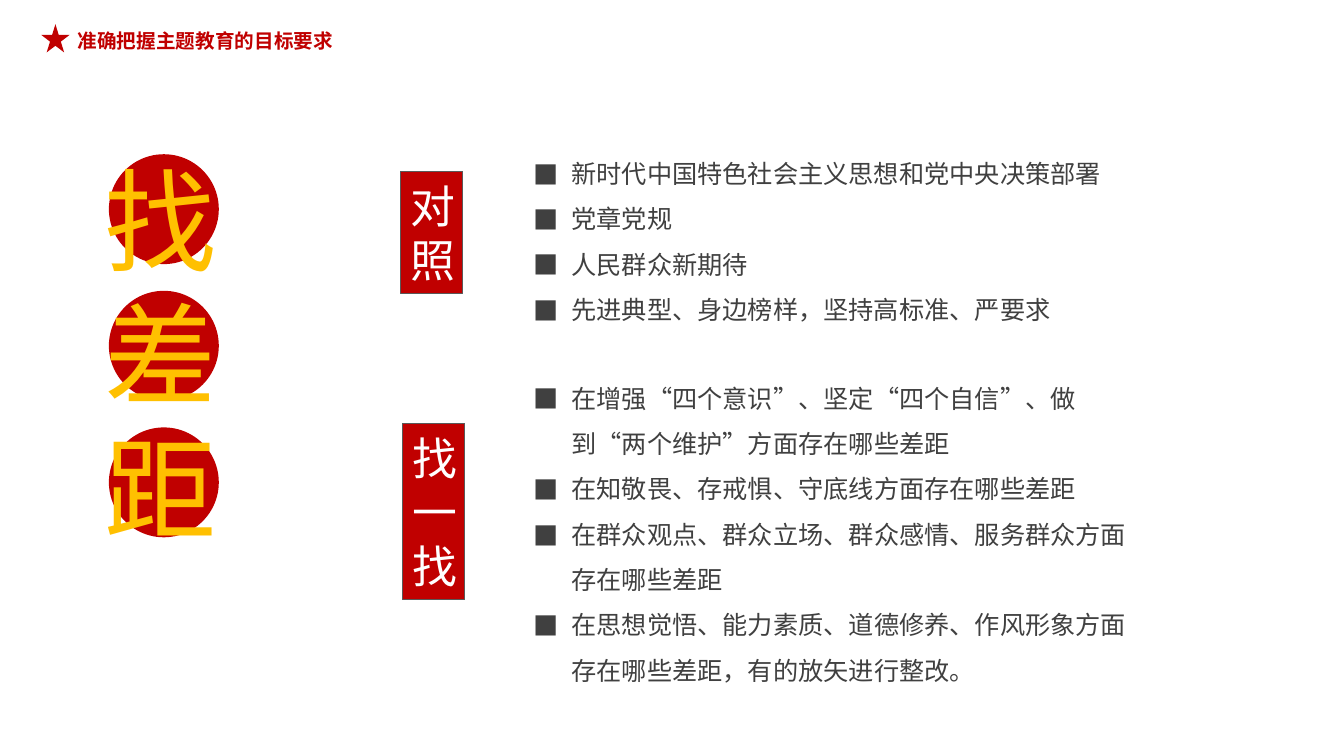
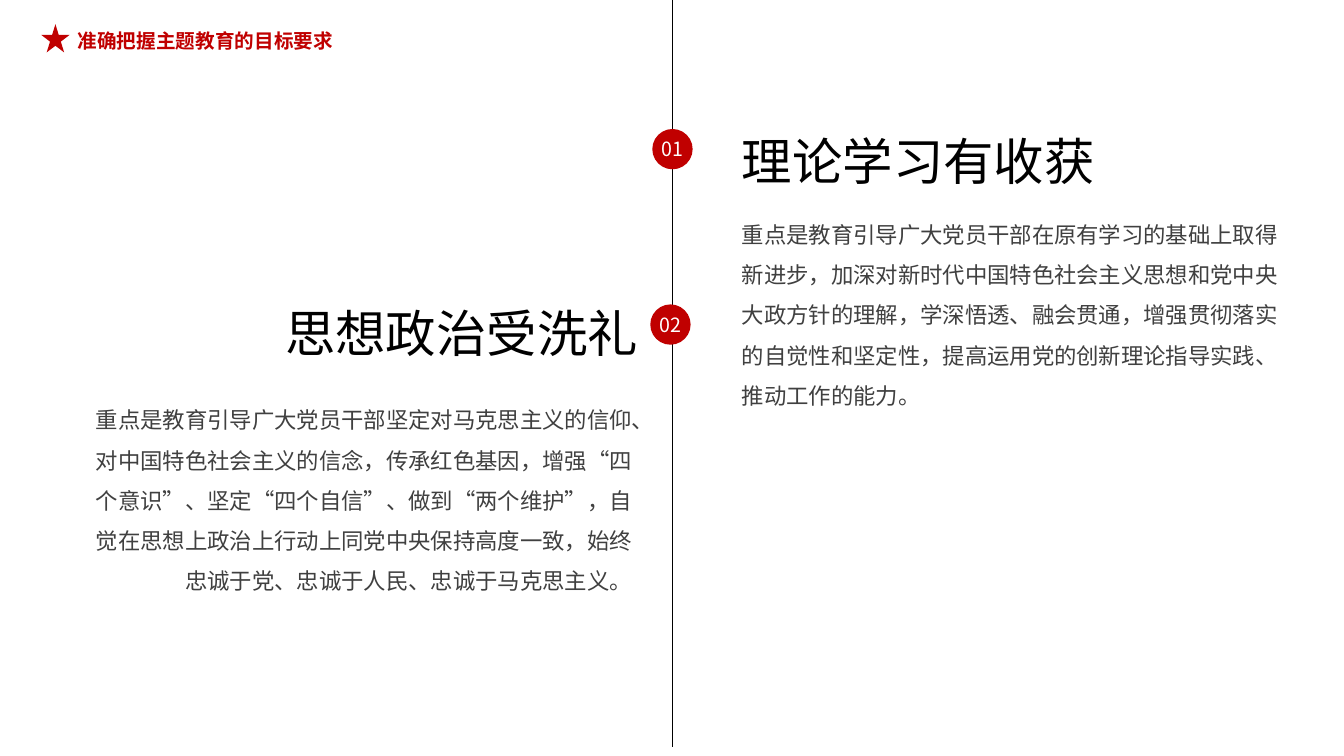
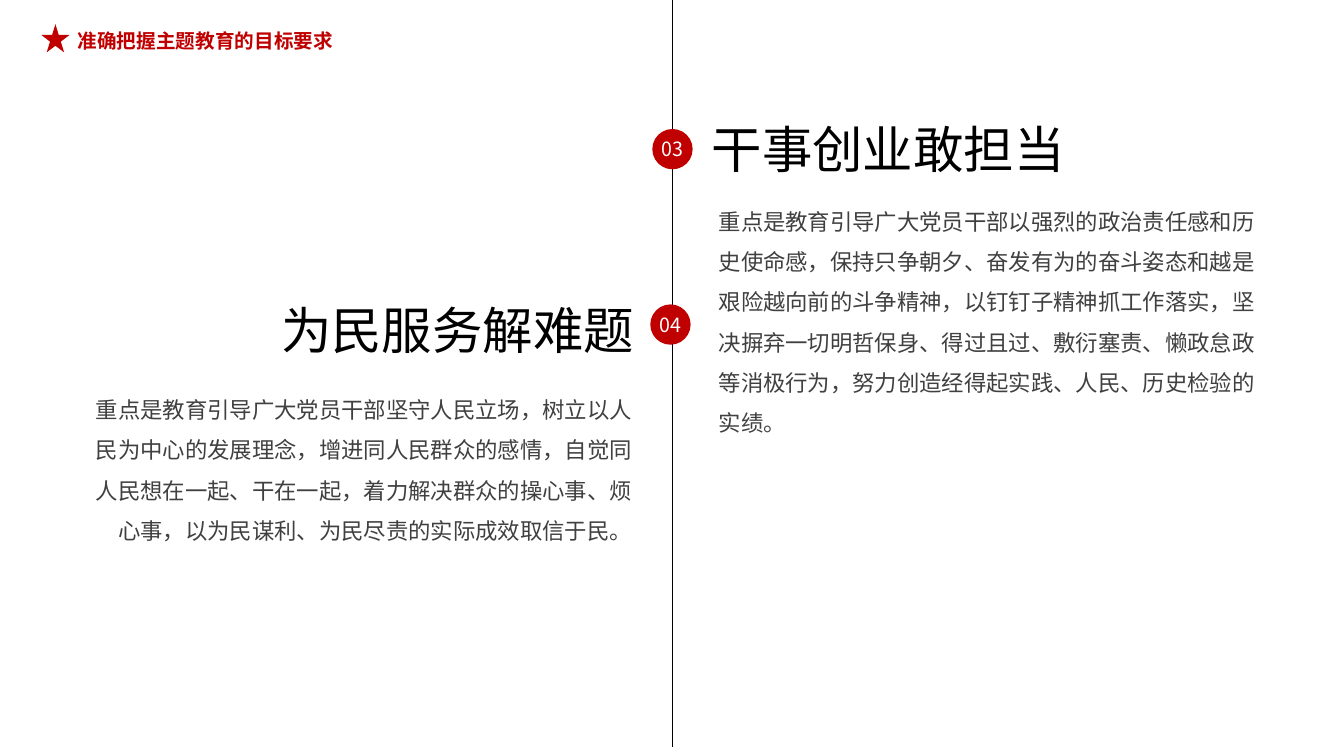
from dataclasses import dataclass

from pptx import Presentation
from pptx.dml.color import RGBColor
from pptx.enum.lang import MSO_LANGUAGE_ID as Language
from pptx.enum.shapes import MSO_CONNECTOR as Connector, MSO_SHAPE as Preset
from pptx.enum.text import MSO_ANCHOR as Anchor, MSO_AUTO_SIZE as AutoSize, PP_ALIGN as Align
from pptx.oxml.xmlchemy import OxmlElement
from pptx.util import Inches, Pt


@dataclass(frozen=True)
class Theme:
    """Colours, font, type sizes and grid cell shared by all slides."""
    red: str = "C00000"
    gold: str = "FFC000"
    white: str = "FFFFFF"
    black: str = "000000"
    text: str = "404040"
    border: str = "595959"
    font: str = "Noto Sans CJK SC"
    small: int = 14
    body: int = 16
    bullet: int = 18
    label: int = 32
    heading: int = 36
    display: int = 80
    line_spacing: float = 1.5
    hanging: float = 3.8
    cell: float = 0.1
    columns: float = 133.3
    rows: float = 75


class Deck:
    """Draws styled elements on the current slide; lengths are grid columns and rows."""

    def __init__(self, theme):
        """Start an empty presentation with the grid's size."""
        self.theme = theme
        self.presentation = Presentation()
        self.presentation.slide_width = self.grid(theme.columns)
        self.presentation.slide_height = self.grid(theme.rows)
        self.slide = None

    def grid(self, cells):
        """Turn a count of grid cells into a length."""
        return Inches(cells * self.theme.cell)

    def box(self, *cells):
        """Turn left, top, width and height in cells into lengths."""
        return [self.grid(value) for value in cells]

    def new_slide(self, title):
        """Add a slide with the star and the running title."""
        self.slide = self.presentation.slides.add_slide(self.presentation.slide_layouts[5])
        self.shape(Preset.STAR_5_POINT, (4.1, 2.4, 2.8, 2.8))
        placeholder = self.slide.shapes.title
        placeholder.left, placeholder.top, placeholder.width, placeholder.height = self.box(6.7, 2.4, 27.5, 3.4)
        self.frame(placeholder, wrap=False)
        self.fill_text(placeholder, [title], self.theme.small, self.theme.red, bold=True)

    def frame(self, shape, wrap=True, anchor=Anchor.TOP):
        """Set wrapping and anchoring of a text frame."""
        frame = shape.text_frame
        frame.word_wrap = wrap
        frame.auto_size = AutoSize.SHAPE_TO_FIT_TEXT
        frame.vertical_anchor = anchor

    def fill_text(self, shape, lines, size, color, align=Align.LEFT, spacing=None, bold=False, bullets=False):
        """Fill a shape with one formatted paragraph for each line."""
        frame = shape.text_frame
        for index, line in enumerate(lines):
            paragraph = frame.add_paragraph() if index else frame.paragraphs[0]
            paragraph.alignment = align
            if spacing:
                paragraph.line_spacing = spacing
            if bullets:
                self.bullet(paragraph)
            run = paragraph.add_run()
            run.text = line
            font = run.font
            font.size, font.bold, font.name = Pt(size), bold, self.theme.font
            font.color.rgb = RGBColor.from_string(color)
            font.language_id = Language.SIMPLIFIED_CHINESE
            east_asian = OxmlElement("a:ea")
            east_asian.set("typeface", self.theme.font)
            run._r.get_or_add_rPr().append(east_asian)

    def bullet(self, paragraph):
        """Give a paragraph a square bullet and a hanging indent."""
        properties = paragraph._p.get_or_add_pPr()
        indent = self.grid(self.theme.hanging)
        properties.set("marL", str(indent))
        properties.set("indent", str(-indent))
        for tag, key, value in (("a:buFont", "typeface", self.theme.font), ("a:buChar", "char", "■")):
            element = OxmlElement(tag)
            element.set(key, value)
            properties.append(element)

    def shape(self, preset, cells, border=None):
        """Add a red preset shape, outlined only when a border colour is given."""
        shape = self.slide.shapes.add_shape(preset, *self.box(*cells))
        shape.shadow.inherit = False
        shape.fill.solid()
        shape.fill.fore_color.rgb = RGBColor.from_string(self.theme.red)
        if border:
            shape.line.color.rgb = RGBColor.from_string(border)
            shape.line.width = Pt(1)
        else:
            shape.line.fill.background()
        return shape

    def text(self, cells, lines, size, color, wrap=True, **style):
        """Add a text box."""
        shape = self.slide.shapes.add_textbox(*self.box(*cells))
        self.frame(shape, wrap)
        self.fill_text(shape, lines, size, color, **style)

    def label(self, cells, words):
        """Add a narrow red label that reads downwards."""
        shape = self.shape(Preset.RECTANGLE, cells, self.theme.border)
        self.frame(shape, anchor=Anchor.MIDDLE)
        shape.text_frame.auto_size = AutoSize.NONE
        self.fill_text(shape, [words], self.theme.label, self.theme.white)

    def bullets(self, cells, lines):
        """Add a bulleted list."""
        self.text(cells, lines, self.theme.bullet, self.theme.text,
                  spacing=self.theme.line_spacing, bullets=True)

    def axis(self, column, length):
        """Add the thin vertical line of a timeline."""
        line = self.slide.shapes.add_connector(Connector.STRAIGHT, *self.box(column, 0, column, length))
        line.line.color.rgb = RGBColor.from_string(self.theme.black)
        line.line.width = Pt(0.5)
        line._element.spPr.append(OxmlElement("a:effectLst"))

    def node(self, left, top, number):
        """Add a numbered circle on the timeline."""
        shape = self.shape(Preset.OVAL, (left, top, 4, 4))
        self.frame(shape, wrap=False, anchor=Anchor.MIDDLE)
        frame = shape.text_frame
        frame.auto_size = AutoSize.NONE
        frame.margin_left = frame.margin_right = frame.margin_top = frame.margin_bottom = 0
        self.fill_text(shape, [number], self.theme.small, self.theme.white, align=Align.CENTER)

    def topic(self, heading_at, heading, body_at, body, align):
        """Add a heading and its paragraph."""
        self.text((*heading_at, 37.4, 7.1), [heading], self.theme.heading, self.theme.black, wrap=False)
        self.text(body_at, [body], self.theme.body, self.theme.text,
                  align=align, spacing=self.theme.line_spacing)


TITLE = "准确把握主题教育的目标要求"
NODES = ((64.7, 12.8), (64.5, 30.2))
SIDES = (Align.LEFT, Align.RIGHT)
TIMELINES = (
    (
        ("01", (72.6, 12.4), "理论学习有收获", (72.6, 20.1, 55.3, 20.7),
         "重点是教育引导广大党员干部在原有学习的基础上取得新进步，加深对新时代中国特色社会主义思想和党中央大政方针的理解，"
         "学深悟透、融会贯通，增强贯彻落实的自觉性和坚定性，提高运用党的创新理论指导实践、推动工作的能力。"),
        ("02", (27.3, 29.5), "思想政治受洗礼", (7.3, 38.5, 56.4, 20.7),
         "重点是教育引导广大党员干部坚定对马克思主义的信仰、对中国特色社会主义的信念，传承红色基因，增强“四个意识”、"
         "坚定“四个自信”、做到“两个维护”，自觉在思想上政治上行动上同党中央保持高度一致，"
         "始终忠诚于党、忠诚于人民、忠诚于马克思主义。"),
    ),
    (
        ("03", (69.6, 11.2), "干事创业敢担当", (70.3, 18.8, 56.4, 24.8),
         "重点是教育引导广大党员干部以强烈的政治责任感和历史使命感，保持只争朝夕、奋发有为的奋斗姿态和越是艰险越向前的斗争精神，"
         "以钉钉子精神抓工作落实，坚决摒弃一切明哲保身、得过且过、敷衍塞责、懒政怠政等消极行为，"
         "努力创造经得起实践、人民、历史检验的实绩。"),
        ("04", (26.9, 29.2), "为民服务解难题", (8.4, 37.5, 55.3, 20.7),
         "重点是教育引导广大党员干部坚守人民立场，树立以人民为中心的发展理念，增进同人民群众的感情，"
         "自觉同人民想在一起、干在一起，着力解决群众的操心事、烦心事，以为民谋利、为民尽责的实际成效取信于民。"),
    ),
)


def gap_slide(deck):
    """Build the slide on finding gaps."""
    deck.new_slide(TITLE)
    for index in range(3):
        deck.shape(Preset.OVAL, (10.8, 15.3 + 13.55 * index, 10.9, 10.9))
    deck.text((9.4, 14.5, 13.7, 41.4), ["找差距"], deck.theme.display, deck.theme.gold)
    deck.label((39.7, 17, 6.2, 12.1), "对照")
    deck.label((39.9, 42, 6.2, 17.5), "找一找")
    deck.bullets((51.9, 13.7, 66.7, 18.7), [
        "新时代中国特色社会主义思想和党中央决策部署",
        "党章党规",
        "人民群众新期待",
        "先进典型、身边榜样，坚持高标准、严要求",
    ])
    deck.bullets((51.9, 36, 62.1, 32.3), [
        "在增强“四个意识”、坚定“四个自信”、做到“两个维护”方面存在哪些差距",
        "在知敬畏、存戒惧、守底线方面存在哪些差距",
        "在群众观点、群众立场、群众感情、服务群众方面存在哪些差距",
        "在思想觉悟、能力素质、道德修养、作风形象方面存在哪些差距，有的放矢进行整改。",
    ])


def timeline_slide(deck, topics):
    """Build a timeline slide with one topic on each side."""
    deck.new_slide(TITLE)
    deck.axis(66.7, 74.1)
    for position, align, (number, *topic) in zip(NODES, SIDES, topics):
        deck.node(*position, number)
        deck.topic(*topic, align)


def main():
    """Build and save the presentation."""
    deck = Deck(Theme())
    gap_slide(deck)
    for topics in TIMELINES:
        timeline_slide(deck, topics)
    deck.presentation.save("out.pptx")


if __name__ == "__main__":
    main()
